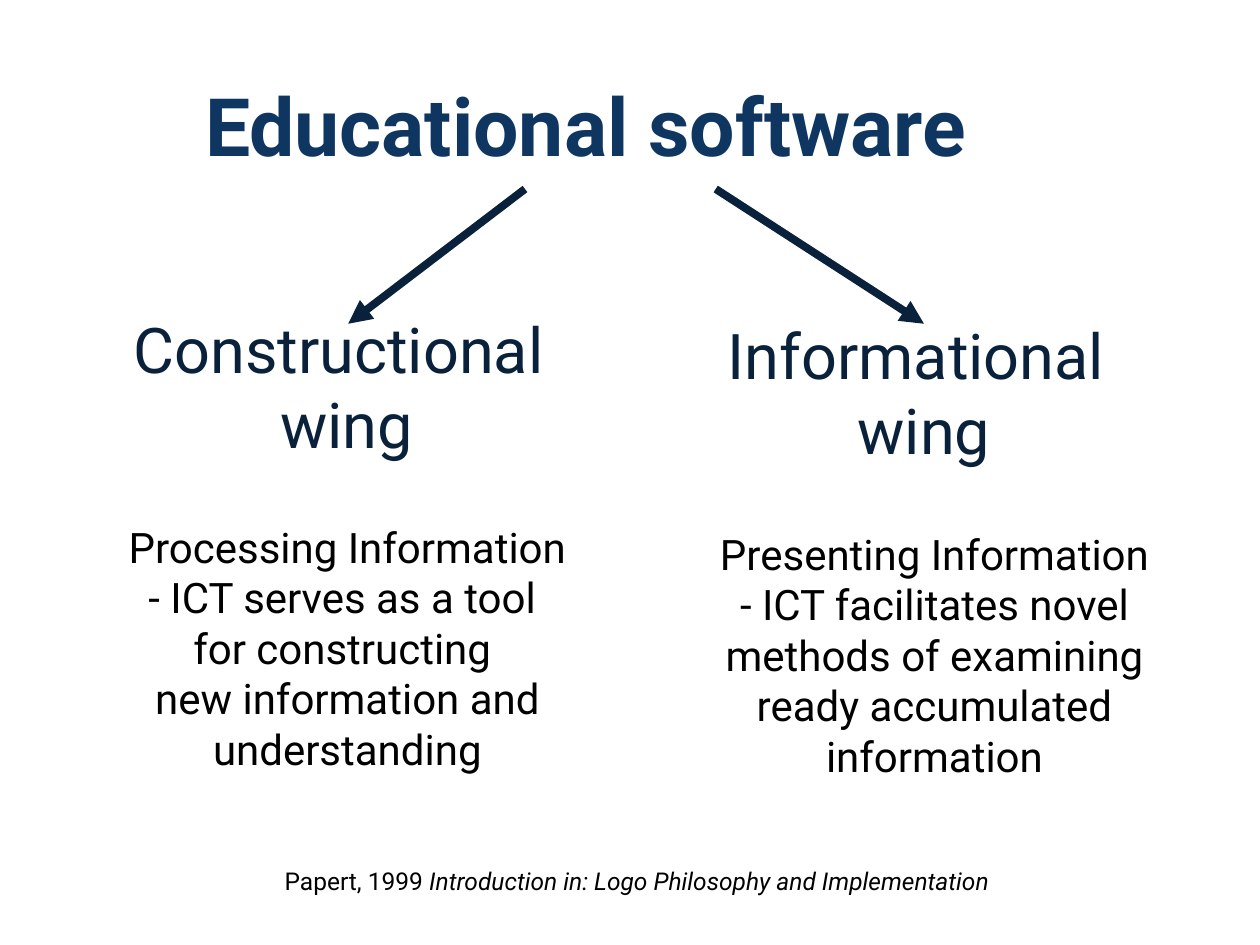
from pptx import Presentation
from pptx.dml.color import RGBColor
from pptx.enum.shapes import MSO_CONNECTOR
from pptx.enum.text import MSO_ANCHOR, PP_ALIGN
from pptx.oxml.ns import qn
from pptx.util import Pt
from lxml.etree import SubElement

TITLE_BLUE = RGBColor(0x0F, 0x36, 0x61)
NAVY = RGBColor(0x09, 0x21, 0x3B)
BLACK = RGBColor(0, 0, 0)

deck = Presentation()
deck.slide_width, deck.slide_height = Pt(720), Pt(540)
page = deck.slides.add_slide(deck.slide_layouts[6])


def add_text(text, left, top, width, height, size, color=BLACK, bold=False,
             anchor=MSO_ANCHOR.MIDDLE, italic_tail=""):
    """Add a centred text box; each newline becomes a line break."""
    box = page.shapes.add_textbox(Pt(left), Pt(top), Pt(width), Pt(height))
    frame = box.text_frame
    frame.word_wrap = True
    frame.vertical_anchor = anchor
    frame.margin_top = frame.margin_bottom = 0
    para = frame.paragraphs[0]
    para.alignment = PP_ALIGN.CENTER
    para.font.size = Pt(size)
    pieces = [(line, False) for line in text.split("\n")]
    if italic_tail:
        pieces.append((italic_tail, True))
    for index, (piece, italic) in enumerate(pieces):
        if index and not italic:
            para.add_line_break()
        span = para.add_run()
        span.text = piece
        span.font.name = "Roboto"
        span.font.size = Pt(size)
        span.font.bold = bold
        span.font.italic = italic
        span.font.color.rgb = color


# Title
add_text("Educational software", 31, 41, 607, 57.6, size=46,
         color=TITLE_BLUE, bold=True, anchor=MSO_ANCHOR.BOTTOM)

# Headings of the two wings
for heading, left, top in [("Constructional \nwing", 30, 181.5),
                           ("Informational \nwing", 360, 185)]:
    add_text(heading, left, top, 336, 78, size=36, color=NAVY)

# Arrows from the title to the wings
for start_x, end_x in [(300, 199), (409, 528)]:
    arrow = page.shapes.add_connector(MSO_CONNECTOR.STRAIGHT, Pt(start_x), Pt(108),
                                      Pt(end_x), Pt(185))
    arrow.line.color.rgb = NAVY
    arrow.line.width = Pt(4.5)
    SubElement(arrow.line._get_or_add_ln(), qn("a:tailEnd"), type="triangle")
    SubElement(arrow._element.spPr, qn("a:effectLst"))

# Descriptions of the two wings
add_text("Processing Information\n- ICT serves as a tool \nfor constructing \n"
         "new information and understanding", 60.5, 294, 276, 152, size=24)
add_text("Presenting Information\n- ICT facilitates novel methods of examining "
         "ready accumulated information", 396, 294.5, 276, 159, size=24)

# Source
add_text("Papert, 1999", 31, 485, 666, 36, size=14,
         italic_tail=" Introduction in: Logo Philosophy and Implementation")

deck.save("out.pptx")
